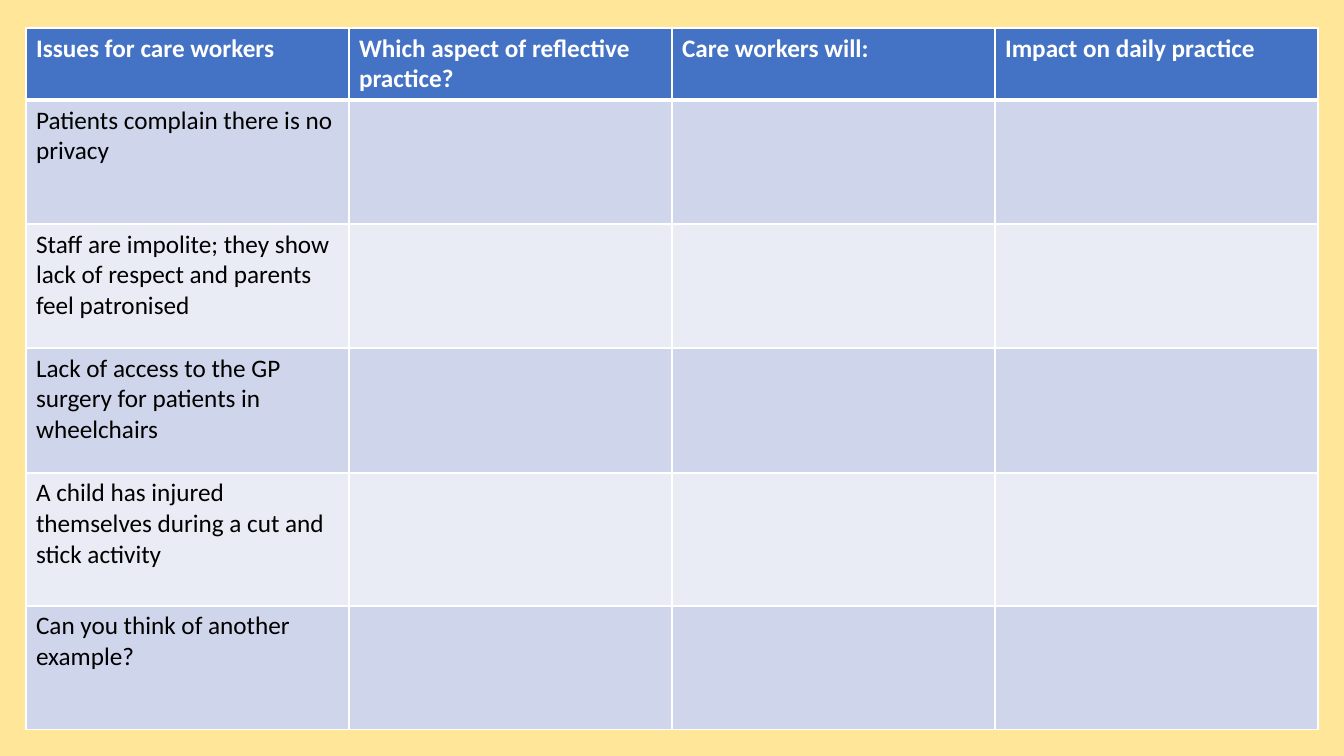
import pptx
import pptx.dml.color
import pptx.oxml
import pptx.oxml.ns
import pptx.util

# Content
HEADINGS = [
    "Issues for care workers",
    "Which aspect of reflective practice?",
    "Care workers will:",
    "Impact on daily practice",
]
ISSUES = [
    "Patients complain there is no privacy",
    "Staff are impolite; they show lack of respect and parents feel patronised",
    "Lack of access to the GP surgery for patients in wheelchairs",
    "A child has injured themselves during a cut and stick activity",
    "Can you think of another example?",
]

# Layout in px
PAGE_WIDTH, PAGE_HEIGHT = 1344, 756
LEFT, TOP = 26, 28
COLUMN_WIDTH = 323
ROW_HEIGHTS = [72, 124, 124, 125, 133, 124]

# Style
FONT, TEXT_SIZE = "Calibri", 18
BACKGROUND, HEADER_FILL = "FFE699", "4472C4"
BAND_FILLS = ["CFD5EA", "E9EBF5"]
WHITE, BLACK = "FFFFFF", "000000"
THIN, THICK = 1, 3


def emu(px):
    return round(px * 914400 / 100.8)


def colour(value):
    return pptx.dml.color.RGBColor.from_string(value)


def set_borders(cell, widths):
    properties = cell._tc.get_or_add_tcPr()
    namespace = pptx.oxml.ns.nsdecls("a")
    for index, (side, width) in enumerate(widths.items()):
        line = pptx.oxml.parse_xml(
            f'<a:{side} {namespace} w="{pptx.util.Pt(width)}"><a:solidFill>'
            f'<a:srgbClr val="{WHITE}"/></a:solidFill></a:{side}>'
        )
        properties.insert(index, line)


def fill_cell(cell, text, fill, text_colour, bold):
    cell.fill.solid()
    cell.fill.fore_color.rgb = colour(fill)
    para = cell.text_frame.paragraphs[0]
    para.font.size = pptx.util.Pt(TEXT_SIZE)
    if text:
        span = para.add_run()
        span.text = text
        span.font.name = FONT
        span.font.size = pptx.util.Pt(TEXT_SIZE)
        span.font.bold = bold
        span.font.color.rgb = colour(text_colour)


# Page
deck = pptx.Presentation()
deck.slide_width, deck.slide_height = emu(PAGE_WIDTH), emu(PAGE_HEIGHT)
page = deck.slides.add_slide(deck.slide_layouts[6])
page.background.fill.solid()
page.background.fill.fore_color.rgb = colour(BACKGROUND)

# Table frame
rows = [HEADINGS] + [[issue, "", "", ""] for issue in ISSUES]
table = page.shapes.add_table(
    len(rows), len(HEADINGS), emu(LEFT), emu(TOP),
    emu(COLUMN_WIDTH * len(HEADINGS)), emu(sum(ROW_HEIGHTS)),
).table
for column in table.columns:
    column.width = emu(COLUMN_WIDTH)
for row, height in zip(table.rows, ROW_HEIGHTS):
    row.height = emu(height)

# Cells: a blue header row over alternating bands
for row_index, texts in enumerate(rows):
    header = row_index == 0
    fill = HEADER_FILL if header else BAND_FILLS[(row_index - 1) % 2]
    widths = {
        "lnL": THIN,
        "lnR": THIN,
        "lnT": THICK if row_index == 1 else THIN,
        "lnB": THICK if header else THIN,
    }
    for column_index, text in enumerate(texts):
        cell = table.cell(row_index, column_index)
        fill_cell(cell, text, fill, WHITE if header else BLACK, header)
        set_borders(cell, widths)

deck.save("out.pptx")
